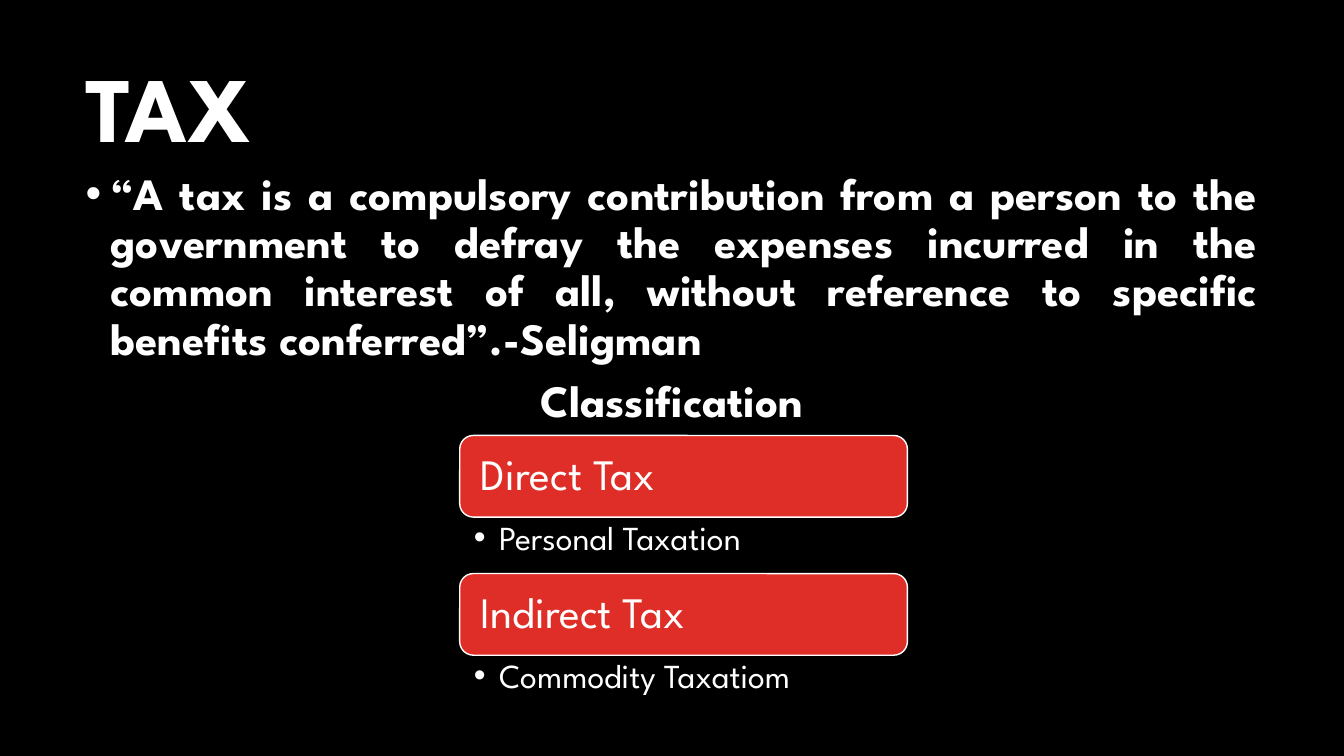
from lxml.etree import SubElement
from pptx import Presentation
from pptx.dml.color import RGBColor
from pptx.enum.shapes import MSO_SHAPE
from pptx.enum.text import MSO_ANCHOR, PP_ALIGN
from pptx.oxml.ns import qn
from pptx.util import Pt

PX = 9144  # EMU per px, 100 px to the inch
SLIDE_WIDTH, SLIDE_HEIGHT = 1333, 750
FONT = "League Spartan"
COLORS = {"background": "000000", "text": "FFFFFF", "box": "DF2E28"}
BULLET_INDENT = 25

DEFINITION = (
    "“A tax is a compulsory contribution from a person to the government to "
    "defray the expenses incurred in the common interest of all, without "
    "reference to specific benefits conferred”.-Seligman"
)
TAX_KINDS = [
    ("Direct Tax", "Personal Taxation"),
    ("Indirect Tax", "Commodity Taxatiom"),
]


def color(name):
    return RGBColor.from_string(COLORS[name])


def set_attributes(target, values):
    for name, value in values.items():
        setattr(target, name, value)


def set_frame(shape, anchor, margins):
    """Wrap the text and set its margins as left, top, right, bottom."""
    left, top, right, bottom = (margin * PX for margin in margins)
    frame = shape.text_frame
    set_attributes(frame, {
        "word_wrap": True, "vertical_anchor": anchor,
        "margin_left": left, "margin_top": top,
        "margin_right": right, "margin_bottom": bottom,
    })
    return frame


def add_text_box(slide, box, anchor=MSO_ANCHOR.TOP, margins=(10, 5, 10, 5)):
    shape = slide.shapes.add_textbox(*(length * PX for length in box))
    return set_frame(shape, anchor, margins)


def add_bullet(paragraph):
    properties = paragraph._p.get_or_add_pPr()
    properties.set("marL", str(BULLET_INDENT * PX))
    properties.set("indent", str(-BULLET_INDENT * PX))
    SubElement(properties, qn("a:buFont"), typeface="Arial")
    SubElement(properties, qn("a:buChar"), char="•")


def write(paragraph, text, size, bold=False, align=PP_ALIGN.LEFT, bullet=False):
    set_attributes(paragraph, {"alignment": align, "line_spacing": 0.9})
    if bullet:
        add_bullet(paragraph)
    run = paragraph.add_run()
    run.text = text
    set_attributes(run.font, {"name": FONT, "size": Pt(size), "bold": bold})
    run.font.color.rgb = color("text")


def add_title(slide, box):
    frame = add_text_box(slide, box, MSO_ANCHOR.MIDDLE)
    write(frame.paragraphs[0], "TAX", 66, bold=True)


def add_definition(slide, box):
    frame = add_text_box(slide, box)
    write(frame.paragraphs[0], DEFINITION, 32, bold=True,
          align=PP_ALIGN.JUSTIFY, bullet=True)
    heading = frame.add_paragraph()
    heading.space_before = Pt(10)
    write(heading, "Classification", 32, bold=True, align=PP_ALIGN.CENTER)


def add_classification(slide, box):
    """Stack a red box with a bulleted detail below it for each kind of tax."""
    left, top, width, height = box
    row_height = height // len(TAX_KINDS)
    label_height = 81
    for row, (label, detail) in enumerate(TAX_KINDS):
        row_top = top + row * row_height
        shape = slide.shapes.add_shape(
            MSO_SHAPE.ROUNDED_RECTANGLE,
            left * PX, row_top * PX, width * PX, label_height * PX)
        shape.shadow.inherit = False
        shape.fill.solid()
        shape.fill.fore_color.rgb = color("box")
        shape.line.color.rgb = color("text")
        shape.line.width = Pt(1)
        frame = set_frame(shape, MSO_ANCHOR.MIDDLE, (17, 13, 17, 13))
        write(frame.paragraphs[0], label, 31)

        detail_box = (left, row_top + label_height,
                      width, row_height - label_height)
        frame = add_text_box(slide, detail_box, margins=(14, 4, 24, 4))
        write(frame.paragraphs[0], detail, 24, bullet=True)


def main():
    presentation = Presentation()
    presentation.slide_width = SLIDE_WIDTH * PX
    presentation.slide_height = SLIDE_HEIGHT * PX
    slide = presentation.slides.add_slide(presentation.slide_layouts[6])
    slide.background.fill.solid()
    slide.background.fill.fore_color.rgb = color("background")

    add_title(slide, (75, 41, 1183, 141))
    add_definition(slide, (75, 165, 1183, 545))
    add_classification(slide, (456, 432, 444, 274))
    presentation.save("out.pptx")


if __name__ == "__main__":
    main()
